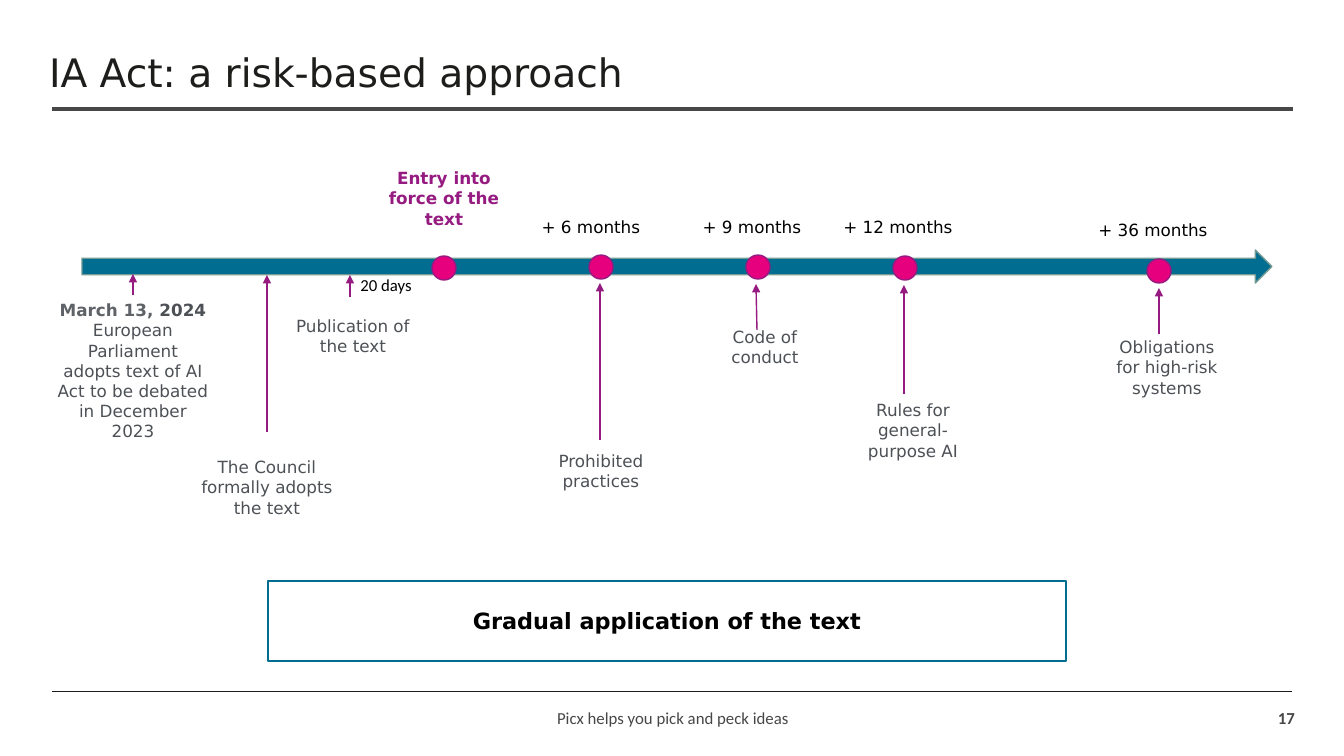
from lxml import etree
from pptx import Presentation, util as u
from pptx.dml.color import RGBColor
from pptx.enum import shapes, text
from pptx.oxml.ns import qn

PX = 914400 / 100.8
SANS, BODY = "DejaVu Sans", "Calibri"
TEAL, PINK, PLUM = "006D91", "E6007E", "951B81"
GREY, DARK, BLACK = "4D5156", "474747", "000000"
LEFT, MID, RIGHT = text.PP_ALIGN.LEFT, text.PP_ALIGN.CENTER, text.PP_ALIGN.RIGHT
LINE = 20


def px(*nums):
    return [u.Emu(round(n * PX)) for n in nums]


def hue(code):
    return RGBColor.from_string(code)


class Deck:
    def __init__(self):
        self.deck = Presentation()
        self.deck.slide_width, self.deck.slide_height = px(1344, 756)
        self.slide = self.deck.slides.add_slide(self.deck.slide_layouts[5])
        self.items = self.slide.shapes

    def fill(self, frame, paras, size=12, font=SANS, align=MID, mid=False, skip=0):
        frame.word_wrap = True
        frame.auto_size = text.MSO_AUTO_SIZE.NONE
        frame.margin_left, frame.margin_right = px(10, 10)
        frame.margin_top, frame.margin_bottom = px(5 + skip * LINE, 5)
        frame.vertical_anchor = text.MSO_ANCHOR.MIDDLE if mid else text.MSO_ANCHOR.TOP
        for i, runs in enumerate(paras):
            para = frame.add_paragraph() if i else frame.paragraphs[0]
            para.alignment = align
            for words, color, bold in runs:
                run = para.add_run()
                run.text = words
                run.font.name, run.font.size = font, u.Pt(size)
                run.font.bold = bold
                run.font.color.rgb = hue(color)

    def title(self, words, box):
        head = self.items.title
        head.left, head.top, head.width, head.height = px(*box)
        self.fill(head.text_frame, [[(words, "1D1D1B", False)]], 28, align=LEFT, mid=True)
        head.text_frame.paragraphs[0].line_spacing = 0.9

    def label(self, box, paras, **style):
        area = self.items.add_textbox(*px(*box))
        self.fill(area.text_frame, paras, **style)
        return area

    def note(self, box, words, color=GREY, bold=False, **style):
        return self.label(box, [[(words, color, bold)]], **style)

    def shape(self, kind, box, fill, edge):
        form = self.items.add_shape(kind, *px(*box))
        form.shadow.inherit = False
        form.fill.solid()
        form.fill.fore_color.rgb = hue(fill)
        form.line.color.rgb = hue(edge)
        form.line.width = u.Pt(1)
        return form

    def line(self, ends, color, width):
        link = self.items.add_connector(shapes.MSO_CONNECTOR.STRAIGHT, *px(*ends))
        link.line.color.rgb = hue(color)
        link.line.width = u.Pt(width)
        etree.SubElement(link._element.spPr, qn("a:effectLst"))
        return link

    def arrow(self, ends, source=None):
        link = self.line(ends, PLUM, 1)
        edge = link._element.spPr.find(qn("a:ln"))
        etree.SubElement(edge, qn("a:tailEnd"), type="triangle")
        if source is not None:
            link.begin_connect(source, 0)


def main():
    deck = Deck()
    deck.line((52, 109, 1293, 109), DARK, 3.25)
    deck.line((52, 691, 1292, 691), "1D1D1B", 0.5)
    deck.title("IA Act: a risk-based approach", (39, 40, 1182, 70))
    deck.note((446, 698, 454, 40), "Picx helps you pick and peck ideas", DARK,
              font=BODY, mid=True)
    deck.note((1210, 698, 95, 40), "17", DARK, True, font=BODY, align=RIGHT, mid=True)

    deck.shape(shapes.MSO_SHAPE.RIGHT_ARROW, (82, 250, 1190, 33), TEAL, "759B96")
    deck.note((368, 143, 152, 92), "Entry into force of the text", PLUM, True, skip=1)

    vote = deck.label((47, 295, 172, 152), [
        [("March 13, ", "5F6368", True), ("2024", GREY, True)],
        [("European Parliament adopts text of AI Act to be debated in December 2023",
          GREY, False)]])
    deck.arrow((133, 295, 133, 274), vote)
    council = deck.note((187, 432, 160, 112), "The Council formally adopts the text", skip=1)
    deck.arrow((267, 432, 267, 275), council)
    deck.note((286, 311, 134, 50), "Publication of the text")
    deck.arrow((350, 297, 350, 275))
    deck.note((305, 268, 162, 34), "20 days", BLACK, font=BODY, mid=True)

    for left, top in ((432, 256), (589, 255), (746, 255), (893, 256), (1147, 259)):
        deck.shape(shapes.MSO_SHAPE.OVAL, (left, top, 24, 24), PINK, PLUM)

    stages = [
        (6, 510, 210, "Prohibited practices", (521, 426, 160, 92), (600, 440, 600, 283)),
        (9, 671, 210, "Code of conduct", (698, 302, 134, 92), (757, 330, 756, 284)),
        (12, 817, 210, "Rules for general-purpose AI", (846, 375, 134, 112),
         (904, 394, 904, 285)),
        (36, 1072, 213, "Obligations for high-risk systems", (1100, 312, 134, 112),
         (1159, 334, 1159, 288)),
    ]
    for months, left, top, words, box, ends in stages:
        deck.note((left, top, 162, 34), f"+ {months} months", BLACK, mid=True)
        deck.note(box, words, skip=1)
        deck.arrow(ends)

    banner = deck.shape(shapes.MSO_SHAPE.RECTANGLE, (268, 581, 798, 80), "FFFFFF", TEAL)
    deck.fill(banner.text_frame, [[("Gradual application of the text", BLACK, True)]],
              16, mid=True)
    deck.deck.save("out.pptx")


if __name__ == "__main__":
    main()
